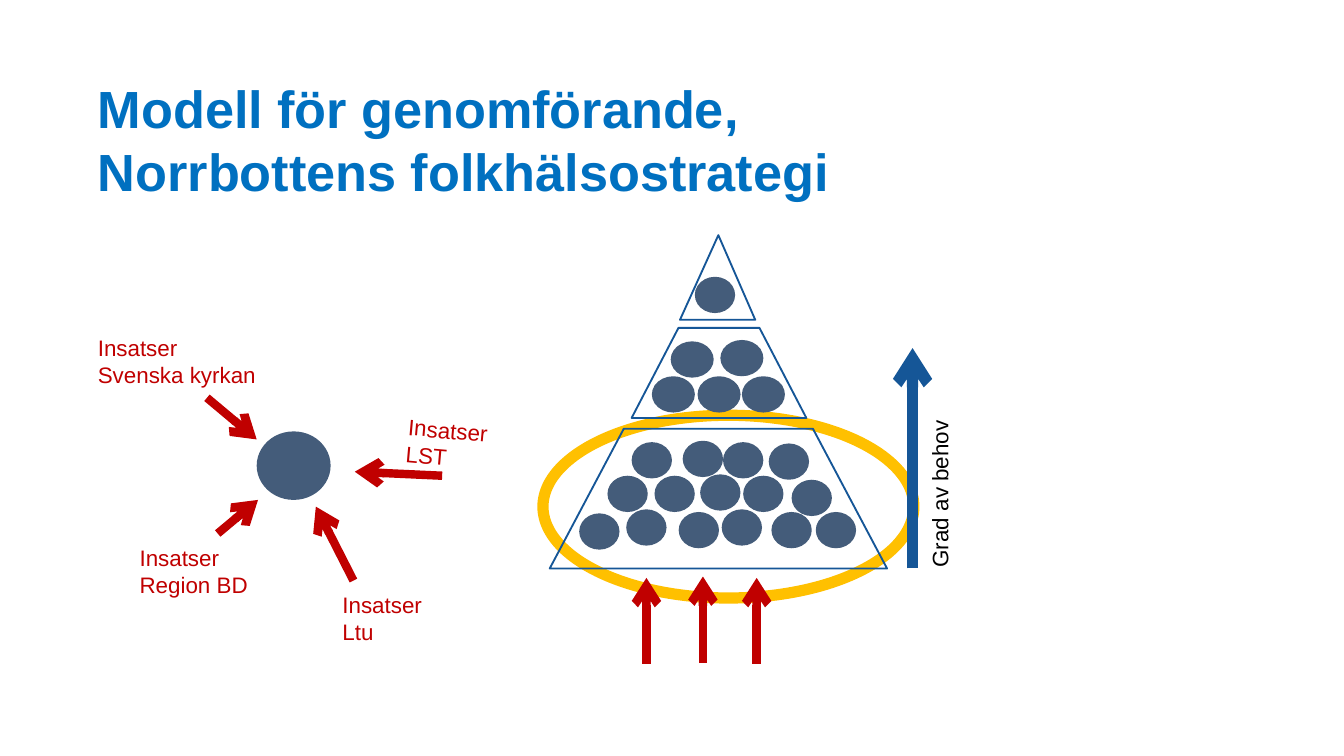
from lxml import etree
from pptx import Presentation
from pptx.dml.color import RGBColor
from pptx.enum import shapes as sh
from pptx.oxml.ns import qn
from pptx.util import Inches, Pt

RED, BLUE, SLATE, YELLOW = "C00000", "155697", "445C7A", "FFC000"
OVAL = sh.MSO_SHAPE.OVAL

# Text: wording, (left, top, width, height), rotation
TITLE = "Modell för genomförande, Norrbottens folkhälsostrategi"
EFFORTS = [
    ("Insatser LST", (2.93, 3.06, 1.01, 0.5), 5),
    ("Insatser Region BD", (0.94, 4, 1.18, 0.5), 0),
    ("Insatser \vSvenska kyrkan", (0.63, 2.44, 1.56, 0.5), 0),
    ("Insatser Ltu", (2.45, 4.35, 0.86, 0.5), 0),
]
# Arrows towards the single person: x1, y1, x2, y2
EFFORT_ARROWS = [
    (1.54, 2.96, 1.91, 3.27),
    (1.62, 3.97, 1.92, 3.72),
    (3.29, 3.54, 2.64, 3.51),
    (2.63, 4.32, 2.35, 3.77),
]
BASE_ARROWS = [(4.81, 4.3), (5.23, 4.29), (5.63, 4.3)]  # tips
BASE_ARROW_LENGTH = 0.64

# Pyramid levels: outline, its box and adjustment, dot size, dot corners
LEVELS = [
    (sh.MSO_SHAPE.TRAPEZOID, (4.09, 3.19, 2.51, 1.04), 0.53, (0.3, 0.27), [
        (4.7, 3.29), (5.08, 3.28), (5.38, 3.29), (5.72, 3.3),
        (4.52, 3.54), (4.87, 3.54), (5.21, 3.53), (5.53, 3.54), (5.89, 3.57),
        (4.31, 3.82), (4.66, 3.79), (5.05, 3.81), (5.37, 3.79), (5.74, 3.81),
        (6.07, 3.81)]),
    (sh.MSO_SHAPE.TRAPEZOID, (4.7, 2.44, 1.3, 0.67), 0.52, (0.32, 0.27), [
        (4.99, 2.54), (5.36, 2.53), (4.85, 2.8), (5.19, 2.8), (5.52, 2.8)]),
    (sh.MSO_SHAPE.ISOSCELES_TRIANGLE, (5.06, 1.75, 0.56, 0.63), 0.51,
     (0.3, 0.27), [(5.17, 2.06)]),
]

# Widescreen slide, 16:9
prs = Presentation()
prs.slide_width = Inches(10)
prs.slide_height = prs.slide_width * 9 // 16
slide = prs.slides.add_slide(prs.slide_layouts[6])


def color(value):
    return RGBColor.from_string(value)


def add_text(content, box, size=12, ink=RED, bold=False, rotation=0):
    label = slide.shapes.add_textbox(*map(Inches, box))
    label.rotation = rotation
    label.text_frame.word_wrap = True
    paragraph = label.text_frame.paragraphs[0]
    paragraph.text = content
    font = paragraph.font
    font.name, font.size, font.bold = "Arial", Pt(size), bold
    font.color.rgb = color(ink)


def add_figure(preset, box, fill=None, line=None, width=1, adjust=None):
    figure = slide.shapes.add_shape(preset, *map(Inches, box))
    figure.shadow.inherit = False
    if fill:
        figure.fill.solid()
        figure.fill.fore_color.rgb = color(fill)
    else:
        figure.fill.background()
    if line:
        figure.line.color.rgb = color(line)
        figure.line.width = Pt(width)
    else:
        figure.line.fill.background()
    if adjust is not None:
        figure.adjustments[0] = adjust


def add_arrow(ends, ink=RED, width=4.5):
    arrow = slide.shapes.add_connector(
        sh.MSO_CONNECTOR.STRAIGHT, *map(Inches, ends))
    arrow.line.color.rgb = color(ink)
    arrow.line.width = Pt(width)
    etree.SubElement(arrow.line._get_or_add_ln(), qn("a:tailEnd"), type="arrow")
    etree.SubElement(arrow._element.spPr, qn("a:effectLst"))


# Title
add_text(TITLE, (0.63, 0.52, 6.16, 1.04), size=28, ink="0070C0", bold=True)

# Ring around the pyramid's base
add_figure(OVAL, (4.04, 3.09, 2.76, 1.36), line=YELLOW, width=6)

# Single person with efforts from each organisation
add_figure(OVAL, (1.91, 3.21, 0.55, 0.51), fill=SLATE)
for ends in EFFORT_ARROWS:
    add_arrow(ends)
for content, box, rotation in EFFORTS:
    add_text(content, box, rotation=rotation)

# Pyramid with its dots
for preset, box, adjust, dot_size, dots in LEVELS:
    add_figure(preset, box, line=BLUE, adjust=adjust)
    for corner in dots:
        add_figure(OVAL, corner + dot_size, fill=SLATE)

# Arrows lifting the base
for x, tip in BASE_ARROWS:
    add_arrow((x, tip + BASE_ARROW_LENGTH, x, tip))

# Scale of need
add_text("Grad av behov", (6.23, 3.41, 1.52, 0.3), ink="000000", rotation=270)
add_arrow((6.79, 4.23, 6.79, 2.59), ink=BLUE, width=6)

prs.save("out.pptx")
